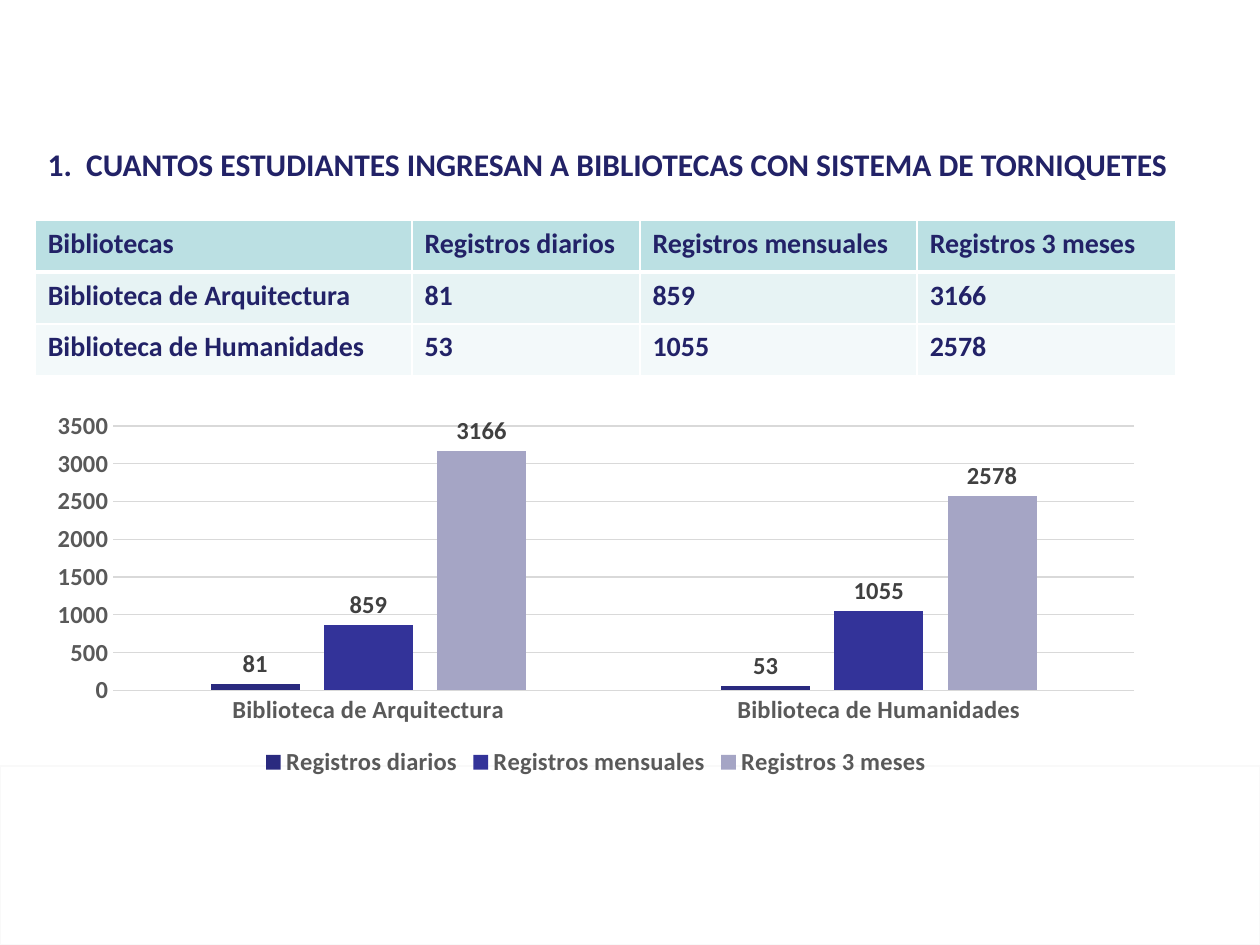
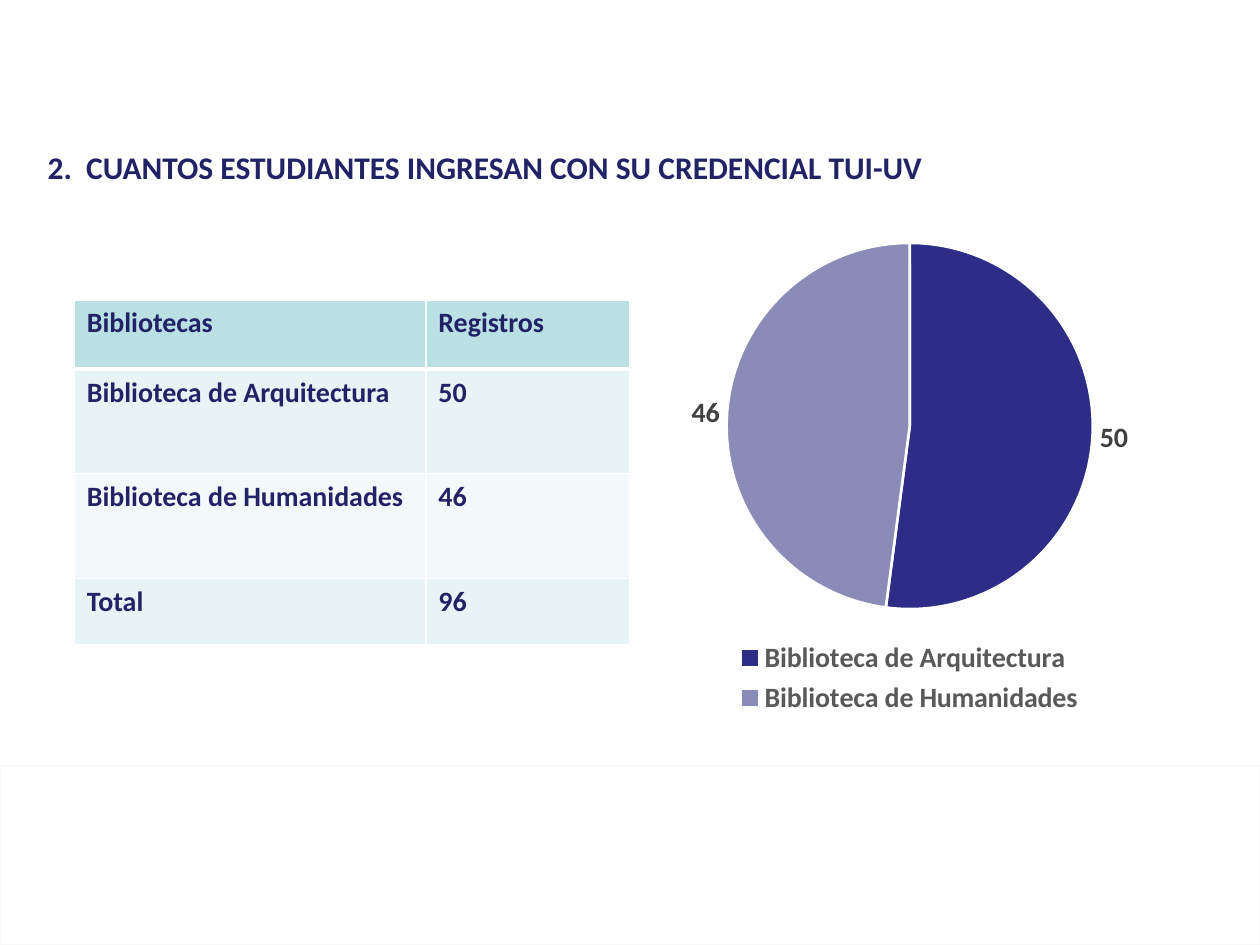
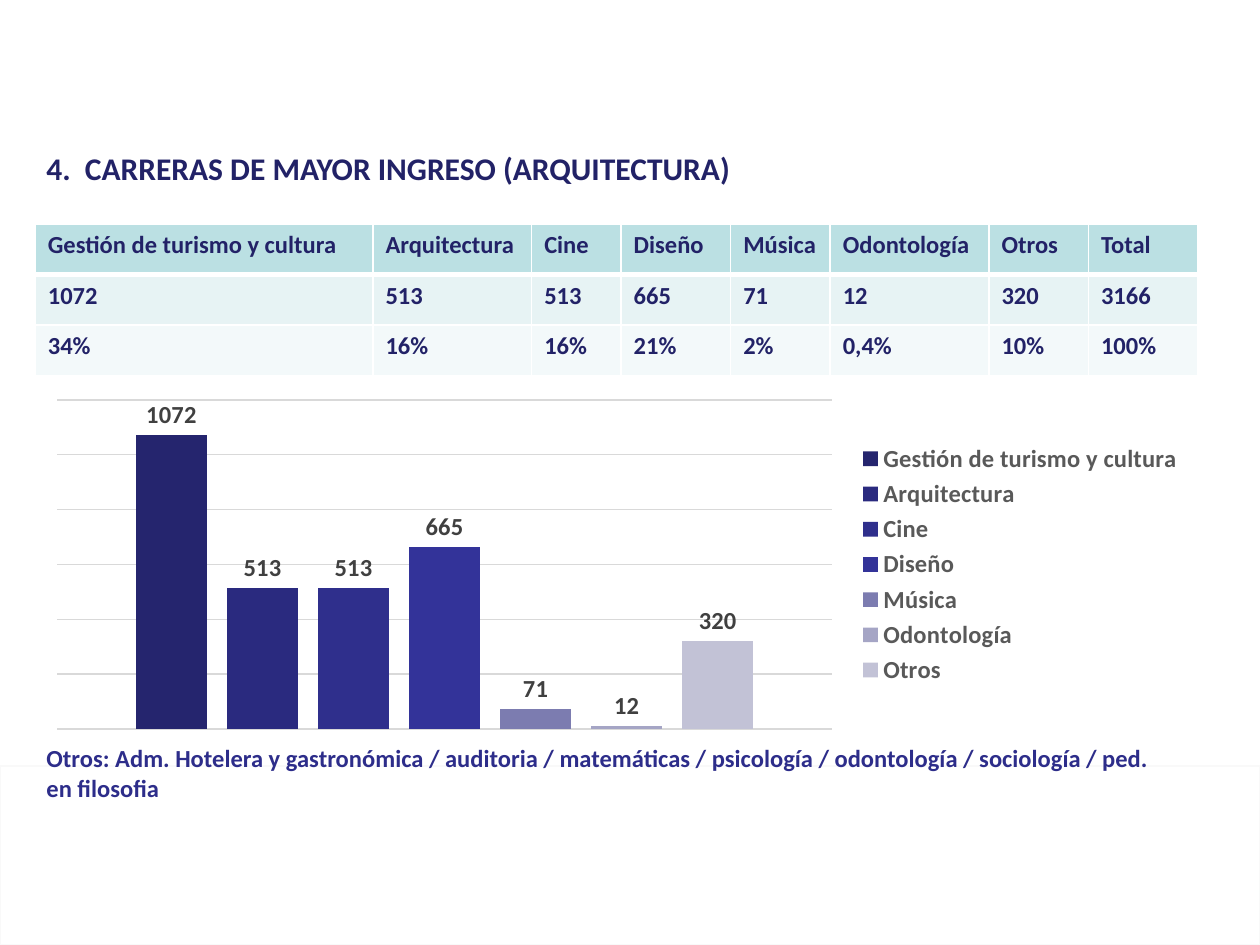
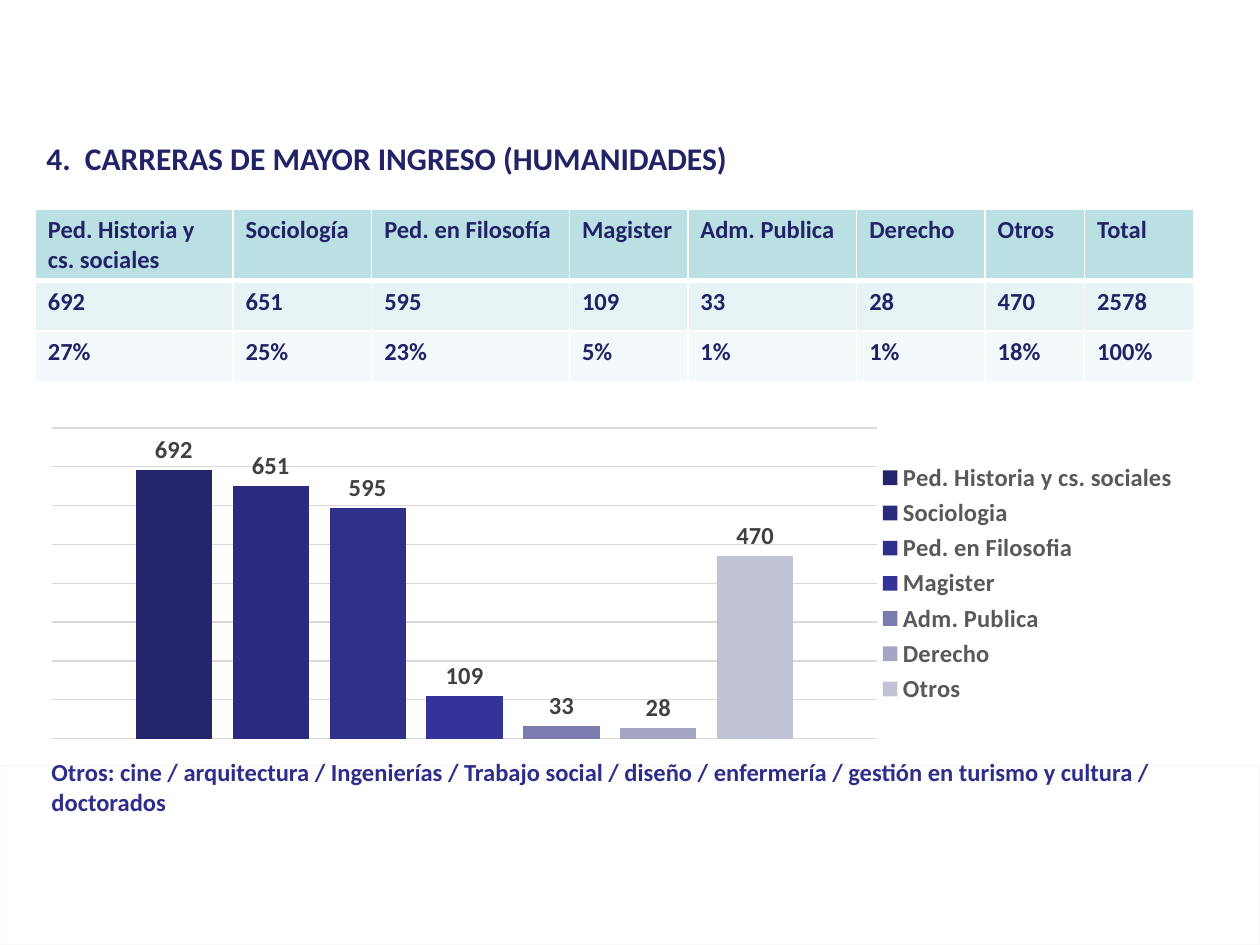
from dataclasses import dataclass

from lxml import etree
from pptx import Presentation
from pptx import util as u
from pptx.chart.data import CategoryChartData
from pptx.dml.color import RGBColor
from pptx.enum import chart as charts, shapes, text
from pptx.oxml import ns


@dataclass(frozen=True)
class Theme:
    font: str = "Calibri"
    ink: str = "222267"
    note: str = "2D2D8A"
    white: str = "FFFFFF"
    band_edge: str = "F9F9F9"
    header: str = "BBE0E3"
    rows: tuple = ("E7F3F4", "F3F9FA")
    grid: str = "D9D9D9"
    axis: str = "595959"
    label: str = "404040"
    records: tuple = ("2A2A7F", "333399", "A5A5C5")
    libraries: tuple = ("2D2D88", "8B8BB7")
    careers: tuple = ("25256E", "2A2A7F", "2F2F8C", "333399",
                      "7C7CB0", "A5A5C5", "C2C2D6")
    title_size: int = 18
    large: int = 16
    small: int = 14


THEME = Theme()
LIBRARIES = ("Biblioteca de Arquitectura", "Biblioteca de Humanidades")


def inches(box):
    return [u.Inches(length) for length in box]


def rgb(color):
    return RGBColor.from_string(color)


def style(font, size, color):
    font.name = THEME.font
    font.size = u.Pt(size)
    font.bold = True
    font.color.rgb = rgb(color)


def paint(part, color):
    part.fill.solid()
    part.fill.fore_color.rgb = rgb(color)


def draw_line(line, color, width=0.75):
    line.color.rgb = rgb(color)
    line.width = u.Pt(width)


def add_band(slide, box):
    band = slide.shapes.add_shape(shapes.MSO_SHAPE.RECTANGLE, *inches(box))
    band.shadow.inherit = False
    paint(band, THEME.white)
    white = band.fill._xPr.find(".//" + ns.qn("a:srgbClr"))
    etree.SubElement(white, ns.qn("a:alpha"), val="65000")
    draw_line(band.line, THEME.band_edge)


def add_words(slide, box, words, size, color):
    frame = slide.shapes.add_textbox(*inches(box)).text_frame
    frame.word_wrap = True
    frame.text = words
    style(frame.paragraphs[0].runs[0].font, size, color)
    return frame


def add_title(slide, box, words):
    frame = add_words(slide, box, words, THEME.title_size, THEME.ink)
    frame.vertical_anchor = text.MSO_ANCHOR.MIDDLE


def add_note(slide, box, words):
    frame = add_words(slide, box, words, THEME.small, THEME.note)
    frame.auto_size = text.MSO_AUTO_SIZE.SHAPE_TO_FIT_TEXT


def add_borders(cell, top, bottom):
    properties = cell._tc.get_or_add_tcPr()
    for side, width in (("L", 1), ("R", 1), ("T", top), ("B", bottom)):
        edge = etree.SubElement(properties, ns.qn(f"a:ln{side}"), w=str(u.Pt(width)))
        fill = etree.SubElement(edge, ns.qn("a:solidFill"))
        etree.SubElement(fill, ns.qn("a:srgbClr"), val=THEME.white)


def add_records(slide, corner, widths, heights, rows, size):
    box = (*corner, sum(widths), sum(heights))
    table = slide.shapes.add_table(len(rows), len(widths), *inches(box)).table
    for column, width in zip(table.columns, widths):
        column.width = u.Inches(width)
    for index, (row, height, values) in enumerate(zip(table.rows, heights, rows)):
        row.height = u.Inches(height)
        color = THEME.rows[(index - 1) % 2] if index else THEME.header
        for cell, value in zip(row.cells, values):
            cell.text = value
            style(cell.text_frame.paragraphs[0].runs[0].font, size, THEME.ink)
            add_borders(cell, 3 if index == 1 else 1, 1 if index else 3)
            paint(cell, color)


def add_graph(slide, box, kind, categories, series, size, legend_side):
    data = CategoryChartData()
    data.categories = categories
    for name, values in series:
        data.add_series(name, values)
    chart = slide.shapes.add_chart(kind, *inches(box), data).chart
    chart.has_title = False
    style(chart.font, size, "000000")
    chart.has_legend = True
    chart.legend.position = legend_side
    chart.legend.include_in_layout = False
    style(chart.legend.font, size, THEME.axis)
    for entry in chart.plots[0].series:
        labels = entry.data_labels
        labels.show_value = True
        labels.position = charts.XL_LABEL_POSITION.OUTSIDE_END
        style(labels.font, size, THEME.label)
    return chart


def add_columns(slide, box, categories, series, colors, legend_side):
    chart = add_graph(slide, box, charts.XL_CHART_TYPE.COLUMN_CLUSTERED,
                      categories, series, THEME.small, legend_side)
    plot = chart.plots[0]
    plot.vary_by_categories = False
    plot.gap_width = 219
    plot.overlap = -27
    for entry, color in zip(plot.series, colors):
        paint(entry.format, color)
        entry.invert_if_negative = False
    chart.value_axis.has_major_gridlines = True
    draw_line(chart.value_axis.major_gridlines.format.line, THEME.grid)
    return chart


def add_library_columns(slide, box, series):
    chart = add_columns(slide, box, LIBRARIES, series, THEME.records,
                        charts.XL_LEGEND_POSITION.BOTTOM)
    for axis in (chart.category_axis, chart.value_axis):
        axis.major_tick_mark = charts.XL_TICK_MARK.NONE
        axis.minor_tick_mark = charts.XL_TICK_MARK.NONE
        style(axis.tick_labels.font, THEME.small, THEME.axis)
    draw_line(chart.category_axis.format.line, THEME.grid)
    chart.value_axis.format.line.fill.background()


def add_library_pie(slide, box, values):
    chart = add_graph(slide, box, charts.XL_CHART_TYPE.PIE, LIBRARIES,
                      [("Series 1", values)], THEME.large,
                      charts.XL_LEGEND_POSITION.BOTTOM)
    plot = chart.plots[0]
    plot.vary_by_categories = True
    for index, color in enumerate(THEME.libraries):
        wedge = plot.series[0].points[index].format
        paint(wedge, color)
        draw_line(wedge.line, THEME.white, 1.5)


def set_plot_area(chart, area):
    plot_area = chart._chartSpace.chart.plotArea
    for previous in plot_area.findall(ns.qn("c:layout")):
        plot_area.remove(previous)
    layout = etree.Element(ns.qn("c:layout"))
    plot_area.insert(0, layout)
    manual = etree.SubElement(layout, ns.qn("c:manualLayout"))
    settings = [("layoutTarget", "inner"), ("xMode", "edge"), ("yMode", "edge")]
    settings += zip("xywh", area)
    for tag, value in settings:
        etree.SubElement(manual, ns.qn(f"c:{tag}"), val=str(value))


def add_career_columns(slide, box, names, counts, area=None):
    series = [(name, [int(count)]) for name, count in zip(names, counts)]
    chart = add_columns(slide, box, ["1"], series, THEME.careers,
                        charts.XL_LEGEND_POSITION.RIGHT)
    chart.category_axis.visible = False
    chart.value_axis.visible = False
    if area:
        set_plot_area(chart, area)


def start_slide(deck, title_box, title):
    slide = deck.slides.add_slide(deck.slide_layouts[6])
    add_band(slide, (0, 6.08, 10, 1.42))
    add_title(slide, title_box, title)
    return slide


def build_entries(deck):
    slide = start_slide(
        deck, (0.28, 0.97, 9.88, 0.67),
        "1.  CUANTOS ESTUDIANTES INGRESAN A BIBLIOTECAS CON SISTEMA DE TORNIQUETES")
    periods = ("Registros diarios", "Registros mensuales", "Registros 3 meses")
    counts = ((81, 859, 3166), (53, 1055, 2578))
    rows = [("Bibliotecas", *periods)]
    rows += [(library, *map(str, values)) for library, values in zip(LIBRARIES, counts)]
    add_records(slide, (0.28, 1.75), (2.99, 1.81, 2.2, 2.05), [0.41] * 3,
                rows, THEME.large)
    add_library_columns(slide, (0.28, 3.2, 8.9, 3.01), list(zip(periods, zip(*counts))))


def build_credentials(deck):
    slide = start_slide(deck, (0.28, 0.99, 9.25, 0.67),
                        "2.  CUANTOS ESTUDIANTES INGRESAN CON SU CREDENCIAL TUI-UV")
    counts = (50, 46)
    rows = [("Bibliotecas", "Registros"), *zip(LIBRARIES, map(str, counts)),
            ("Total", str(sum(counts)))]
    add_records(slide, (0.59, 2.38), (2.79, 1.62), (0.55, 0.83, 0.83, 0.53),
                rows, THEME.large)
    add_library_pie(slide, (4.69, 1.79, 5.06, 3.93), counts)


def build_architecture(deck):
    slide = start_slide(deck, (0.27, 1, 7.58, 0.67),
                        "4.  CARRERAS DE MAYOR INGRESO (ARQUITECTURA)")
    careers = ("Gestión de turismo y cultura", "Arquitectura", "Cine", "Diseño",
               "Música", "Odontología", "Otros")
    counts = ("1072", "513", "513", "665", "71", "12", "320")
    shares = ("34%", "16%", "16%", "21%", "2%", "0,4%", "10%", "100%")
    add_records(slide, (0.28, 1.78),
                (2.68, 1.26, 0.71, 0.87, 0.79, 1.26, 0.79, 0.87), [0.4] * 3,
                [(*careers, "Total"), (*counts, "3166"), shares], THEME.small)
    add_career_columns(slide, (0.27, 3.12, 9.22, 2.72), careers, counts)
    add_note(slide, (0.27, 5.85, 9.11, 0.57),
             "Otros: Adm. Hotelera y gastronómica / auditoria / matemáticas / "
             "psicología / odontología / sociología / ped. en filosofia")


def build_humanities(deck):
    slide = start_slide(deck, (0.27, 0.92, 7.58, 0.67),
                        "4.  CARRERAS DE MAYOR INGRESO (HUMANIDADES)")
    careers = ("Ped. Historia y cs. sociales", "Sociología", "Ped. en Filosofía",
               "Magister", "Adm. Publica", "Derecho", "Otros")
    counts = ("692", "651", "595", "109", "33", "28", "470")
    shares = ("27%", "25%", "23%", "5%", "1%", "1%", "18%", "100%")
    add_records(slide, (0.28, 1.66),
                (1.57, 1.1, 1.57, 0.94, 1.34, 1.02, 0.79, 0.87), (0.56, 0.4, 0.4),
                [(*careers, "Total"), (*counts, "2578"), shares], THEME.small)
    legend_names = [career.replace("ía", "ia") for career in careers]
    add_career_columns(slide, (0.23, 3.26, 9.22, 2.74), legend_names, counts,
                       (0.02, 0.05, 0.71, 0.9))
    add_note(slide, (0.31, 5.96, 9.14, 0.57),
             "Otros: cine / arquitectura / Ingenierías / Trabajo social / diseño / "
             "enfermería / gestión en turismo y cultura / doctorados")


def main():
    deck = Presentation()
    deck.slide_width = u.Inches(10)
    deck.slide_height = u.Inches(7.5)
    for build in (build_entries, build_credentials, build_architecture, build_humanities):
        build(deck)
    deck.save("out.pptx")


if __name__ == "__main__":
    main()
